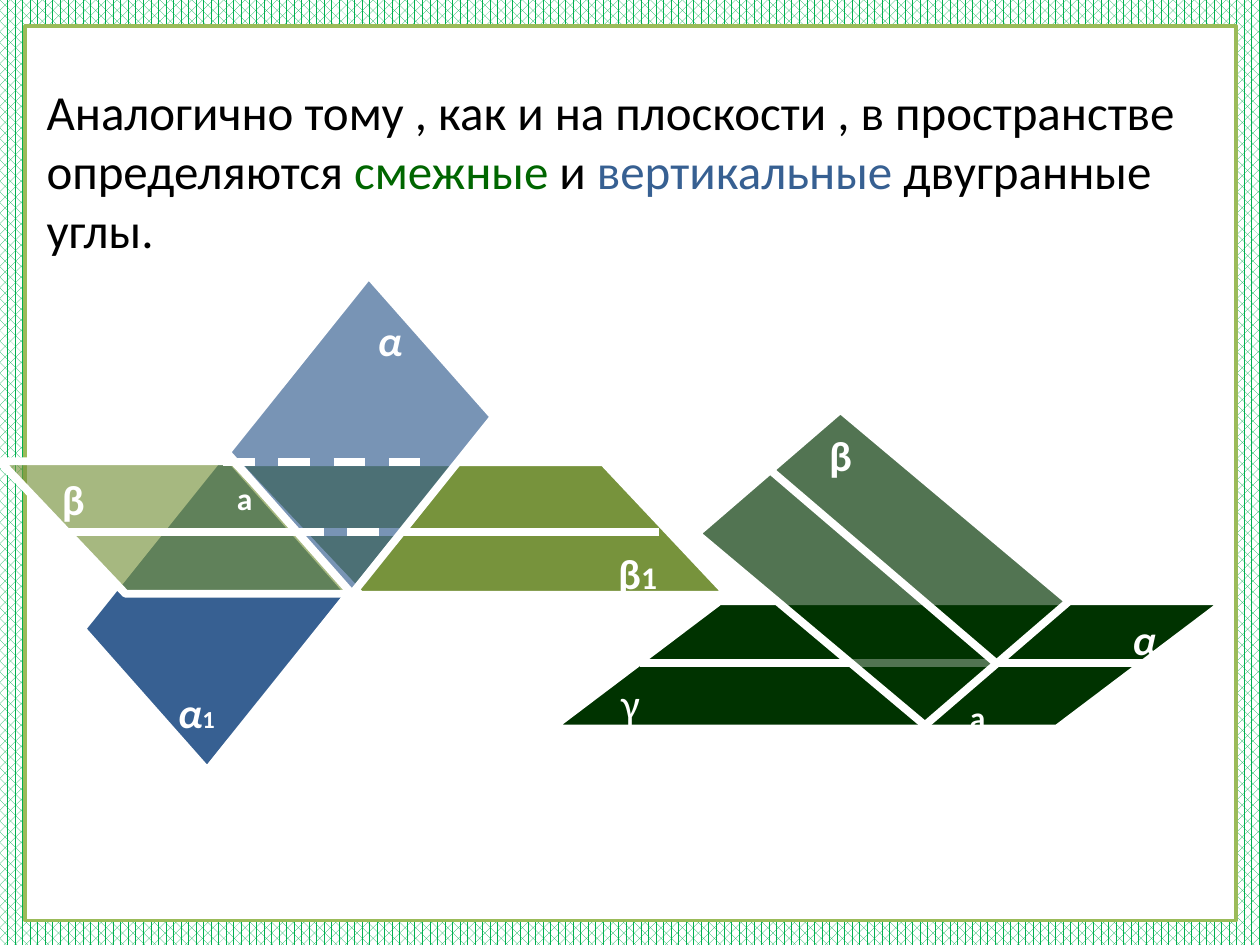
import pptx
import pptx.util
from lxml import etree
from pptx.dml.color import RGBColor
from pptx.enum.dml import MSO_LINE, MSO_PATTERN
from pptx.enum.shapes import MSO_CONNECTOR, MSO_SHAPE
from pptx.enum.text import MSO_ANCHOR, MSO_AUTO_SIZE, PP_ALIGN
from pptx.oxml.ns import qn
from pptx.util import Cm, Pt

FONT = "Calibri"
WHITE = RGBColor(0xFF, 0xFF, 0xFF)
BLACK = RGBColor(0, 0, 0)
PATTERN_GREEN = RGBColor(0x00, 0xB0, 0x50)
FRAME_GREEN = RGBColor(0x9B, 0xBB, 0x59)
WORD_GREEN = RGBColor(0x00, 0x66, 0x00)
DARK_GREEN = RGBColor(0x00, 0x33, 0x00)
OLIVE = RGBColor(0x77, 0x93, 0x3C)
BLUE = RGBColor(0x37, 0x60, 0x92)
EDGE = Pt(4.5)

STATEMENT = [
    ("Аналогично тому , как и на плоскости , в пространстве определяются ", BLACK),
    ("смежные ", WORD_GREEN),
    ("и ", BLACK),
    ("вертикальные ", BLUE),
    ("двугранные углы.", BLACK),
]

# Planes: box in cm, slant, rotation, mirrored, colour, opacity in percent.
# Lines: ends in cm, dashed. Listed from back to front.
ADJACENT_ANGLES = [
    ("plane", (11.1, 12.12, 13.61, 2.57), 1.324, 0, False, DARK_GREEN, 100),
    ("line", (12.9, 13.36, 23.11, 13.36), False),
    ("plane", (14.48, 9.55, 6.63, 3.78), 0.163, 40, False, DARK_GREEN, 68),
    ("line", (15.52, 9.47, 20.07, 13.36), False),
]
VERTICAL_ANGLES = [
    ("plane", (1.73, 10.44, 5.23, 3.76), 0.173, 308.7, False, BLUE, 100),
    ("plane", (4.75, 9.32, 9.93, 2.67), 0.941, 0, True, OLIVE, 100),
    ("plane", (0, 9.3, 7.24, 2.67), 0.948, 0, True, OLIVE, 65),
    ("line", (1.14, 10.72, 13.28, 10.72), False),
    ("plane", (4.65, 6.88, 5.23, 3.76), 0.173, 308.7, False, BLUE, 67),
    ("line", (5.89, 10.72, 8.1, 10.72), True),
    ("line", (4.5, 9.32, 8.89, 9.32), True),
]

# Box in cm, then runs of text, size, bold, italic
LABELS = [
    ((12.27, 13.59, 0.86, 1.17), [("γ", 24, False, False)]),
    ((22.58, 12.24, 0.97, 1.17), [("α", 24, True, True)]),
    ((19.3, 13.94, 0.81, 0.94), [("а", 18, True, False)]),
    ((16.46, 8.53, 0.97, 1.17), [("β", 24, True, False)]),
    ((0.97, 9.42, 1.02, 1.27), [("β", 24, True, False)]),
    ((12.17, 10.92, 1.37, 1.27), [("β", 24, True, False), ("1", 18, True, False)]),
    ((4.5, 9.53, 0.86, 1.02), [("а", 18, True, False)]),
    ((7.34, 6.22, 1.04, 1.27), [("α", 24, True, True)]),
    ((3.3, 13.72, 1.32, 1.27), [("α", 24, True, True), ("1", 14, True, False)]),
]


def in_cm(lengths):
    return [Cm(length) for length in lengths]


def add_filled(page, kind, place, fill, line, width):
    shape = page.shapes.add_shape(kind, *in_cm(place))
    shape.shadow.inherit = False
    shape.fill.solid()
    shape.fill.fore_color.rgb = fill
    shape.line.color.rgb = line
    shape.line.width = width
    return shape


def add_plane(page, place, slant, rotation, mirrored, colour, opacity):
    plane = add_filled(page, MSO_SHAPE.PARALLELOGRAM, place, colour, WHITE, EDGE)
    plane.adjustments[0] = slant
    plane.rotation = rotation
    properties = plane._element.spPr
    if mirrored:
        properties.find(qn("a:xfrm")).set("flipH", "1")
    if opacity < 100:
        fill_colour = properties.find(qn("a:solidFill")).find(qn("a:srgbClr"))
        etree.SubElement(fill_colour, qn("a:alpha")).set("val", str(opacity * 1000))


def add_line(page, ends, dashed):
    line = page.shapes.add_connector(MSO_CONNECTOR.STRAIGHT, *in_cm(ends))
    line.line.color.rgb = WHITE
    line.line.width = EDGE
    if dashed:
        line.line.dash_style = MSO_LINE.DASH
    etree.SubElement(line._element.spPr, qn("a:effectLst"))


def add_span(para, text, size, colour, bold=False, italic=False):
    span = para.add_run()
    span.text = text
    span.font.name = FONT
    span.font.size = Pt(size)
    span.font.color.rgb = colour
    span.font.bold = bold
    span.font.italic = italic


def add_label(page, place, spans):
    frame = page.shapes.add_textbox(*in_cm(place)).text_frame
    frame.word_wrap = False
    frame.auto_size = MSO_AUTO_SIZE.SHAPE_TO_FIT_TEXT
    if spans[0][0] == "γ":
        frame.vertical_anchor = MSO_ANCHOR.MIDDLE
    para = frame.paragraphs[0]
    para.alignment = PP_ALIGN.CENTER
    for text, size, bold, italic in spans:
        add_span(para, text, size, WHITE, bold, italic)


def main():
    deck = pptx.Presentation()
    deck.slide_width, deck.slide_height = Cm(25.4), Cm(19.05)
    page = deck.slides.add_slide(deck.slide_layouts[6])

    backdrop = page.background.fill
    backdrop.patterned()
    backdrop.pattern = MSO_PATTERN.PERCENT_60
    backdrop.fore_color.rgb = PATTERN_GREEN
    backdrop.back_color.rgb = WHITE
    add_filled(page, MSO_SHAPE.RECTANGLE, (0.51, 0.53, 24.41, 18.03),
               WHITE, FRAME_GREEN, Pt(2))

    frame = page.shapes.add_textbox(*in_cm((0.69, 1.52, 24, 5.59))).text_frame
    frame.word_wrap = True
    for text, colour in STATEMENT:
        add_span(frame.paragraphs[0], text, 28, colour)

    draw = {"plane": add_plane, "line": add_line}
    for kind, *details in ADJACENT_ANGLES + VERTICAL_ANGLES:
        draw[kind](page, *details)
    for place, spans in LABELS:
        add_label(page, place, spans)

    deck.save("out.pptx")


if __name__ == "__main__":
    main()
